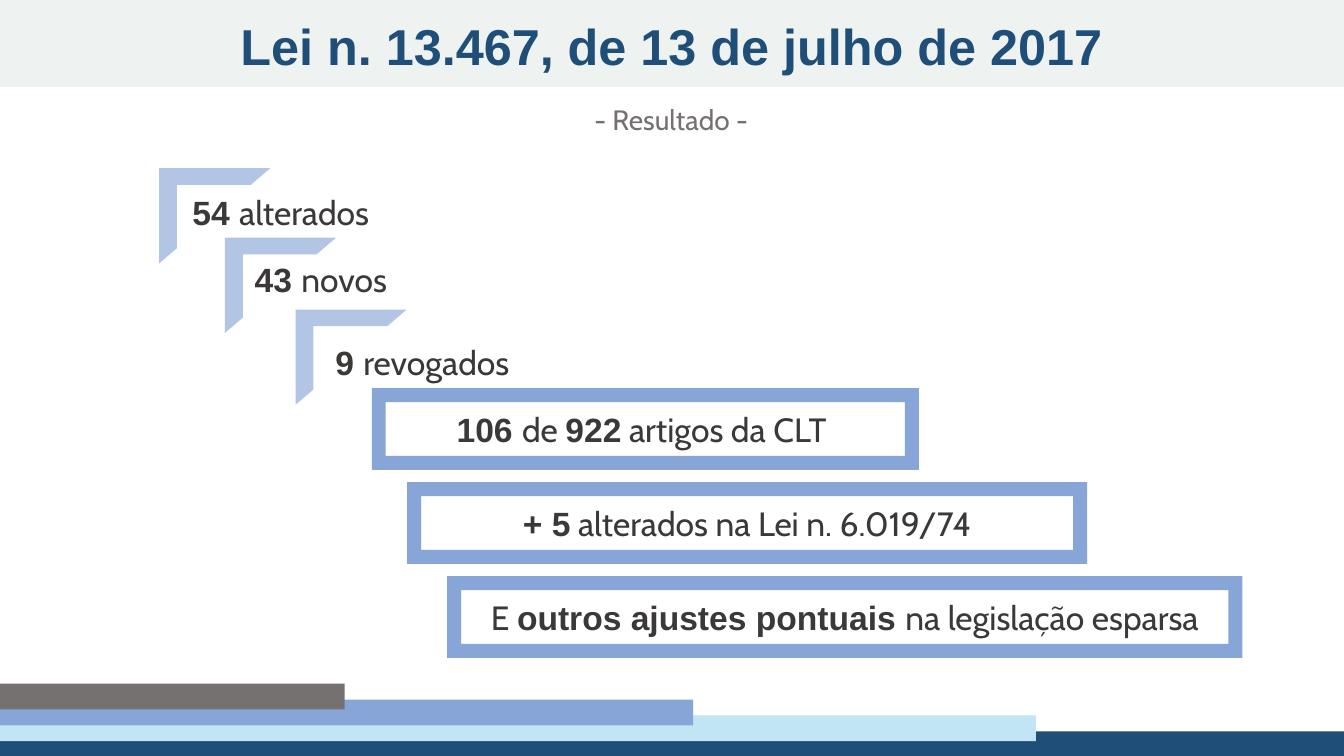
from lxml.etree import SubElement
from pptx import Presentation
from pptx.dml.color import RGBColor
from pptx.enum.shapes import MSO_SHAPE
from pptx.enum.text import MSO_ANCHOR, MSO_AUTO_SIZE, PP_ALIGN
from pptx.oxml.ns import qn
from pptx.util import Cm, Pt

NAVY = RGBColor(0x1F, 0x4E, 0x79)
SKY = RGBColor(0xC2, 0xE5, 0xF6)
BLUE = RGBColor(0x87, 0xA5, 0xD7)
GRAY = RGBColor(0x76, 0x71, 0x71)
MIST = RGBColor(0xEE, 0xF2, 0xF0)
INK = RGBColor(0x3B, 0x38, 0x38)

SLIDE_WIDTH = 33.87
SLIDE_HEIGHT = 19.05


def write(frame, runs, size=24, colour=INK, align=PP_ALIGN.LEFT,
          anchor=MSO_ANCHOR.TOP, fit=MSO_AUTO_SIZE.SHAPE_TO_FIT_TEXT):
    frame.word_wrap = True
    frame.auto_size = fit
    frame.vertical_anchor = anchor
    paragraph = frame.paragraphs[0]
    paragraph.alignment = align
    paragraph.space_before = Pt(0)
    for text, bold in runs:
        run = paragraph.add_run()
        run.text = text
        run.font.name = "Arial" if bold else "Cabin"
        run.font.bold = bold
        run.font.size = Pt(size)
        run.font.color.rgb = colour


def add_block(slide, preset, box, colour, adjustments=(), opacity=None):
    block = slide.shapes.add_shape(preset, *map(Cm, box))
    block.shadow.inherit = False
    block.fill.solid()
    block.fill.fore_color.rgb = colour
    block.line.fill.background()
    for index, value in enumerate(adjustments):
        block.adjustments[index] = value
    if opacity is not None:
        tint = block.element.spPr.find(qn("a:solidFill"))[0]
        SubElement(tint, qn("a:alpha"), val=str(opacity * 1000))
    return block


def place_heading(heading, box, text, bold, size, colour):
    heading.left, heading.top, heading.width, heading.height = map(Cm, box)
    write(heading.text_frame, [(text, bold)], size=size, colour=colour,
          align=PP_ALIGN.CENTER)
    heading.element.getparent().append(heading.element)


def add_count(slide, corner, label, number, kind):
    add_block(slide, MSO_SHAPE.HALF_FRAME, (*corner, 2.8, 2.4), BLUE,
              adjustments=(0.175, 0.188), opacity=64)
    caption = slide.shapes.add_textbox(*map(Cm, (*label, 5.33, 1.28)))
    write(caption.text_frame, [(number + " ", True), (kind, False)])


def add_framed_text(slide, box, runs):
    border = add_block(slide, MSO_SHAPE.FRAME, box, BLUE, adjustments=(0.171,))
    write(border.text_frame, runs, align=PP_ALIGN.CENTER,
          anchor=MSO_ANCHOR.MIDDLE, fit=MSO_AUTO_SIZE.NONE)


def main():
    deck = Presentation()
    deck.slide_width = Cm(SLIDE_WIDTH)
    deck.slide_height = Cm(SLIDE_HEIGHT)
    slide = deck.slides.add_slide(deck.slide_layouts[0])

    steps = [(SLIDE_WIDTH, NAVY), (26.11, SKY), (17.47, BLUE), (8.69, GRAY)]
    for level, (width, colour) in enumerate(steps):
        add_block(slide, MSO_SHAPE.RECTANGLE,
                  (0, 18.43 - 0.4 * level, width, 0.65), colour)
    add_block(slide, MSO_SHAPE.RECTANGLE, (0, 0, SLIDE_WIDTH, 2.19), MIST)

    place_heading(slide.shapes.title, (1.4, 0.25, 31.06, 1.8),
                  "Lei n. 13.467, de 13 de julho de 2017", True, 36, NAVY)
    place_heading(slide.placeholders[1], (2.54, 2.46, 28.75, 1.11),
                  "- Resultado -", False, 20, GRAY)

    counts = [
        ((4.01, 4.24), (4.6, 4.7), "54", "alterados"),
        ((5.67, 5.99), (6.17, 6.4), "43", "novos"),
        ((7.45, 7.8), (8.2, 8.48), "9", "revogados"),
    ]
    for count in counts:
        add_count(slide, *count)

    totals = [
        (9.37, 13.79, [("106 ", True), ("de ", False), ("922", True),
                       (" artigos da CLT ", False)]),
        (10.26, 17.14, [("+ 5", True),
                        (" alterados na Lei n. 6.019/74", False)]),
        (11.27, 20.04, [("E ", False), ("outros ajustes pontuais ", True),
                        ("na legislação esparsa", False)]),
    ]
    for row, (left, width, runs) in enumerate(totals):
        add_framed_text(slide, (left, 9.78 + 2.37 * row, width, 2.06), runs)

    deck.save("out.pptx")


if __name__ == "__main__":
    main()
